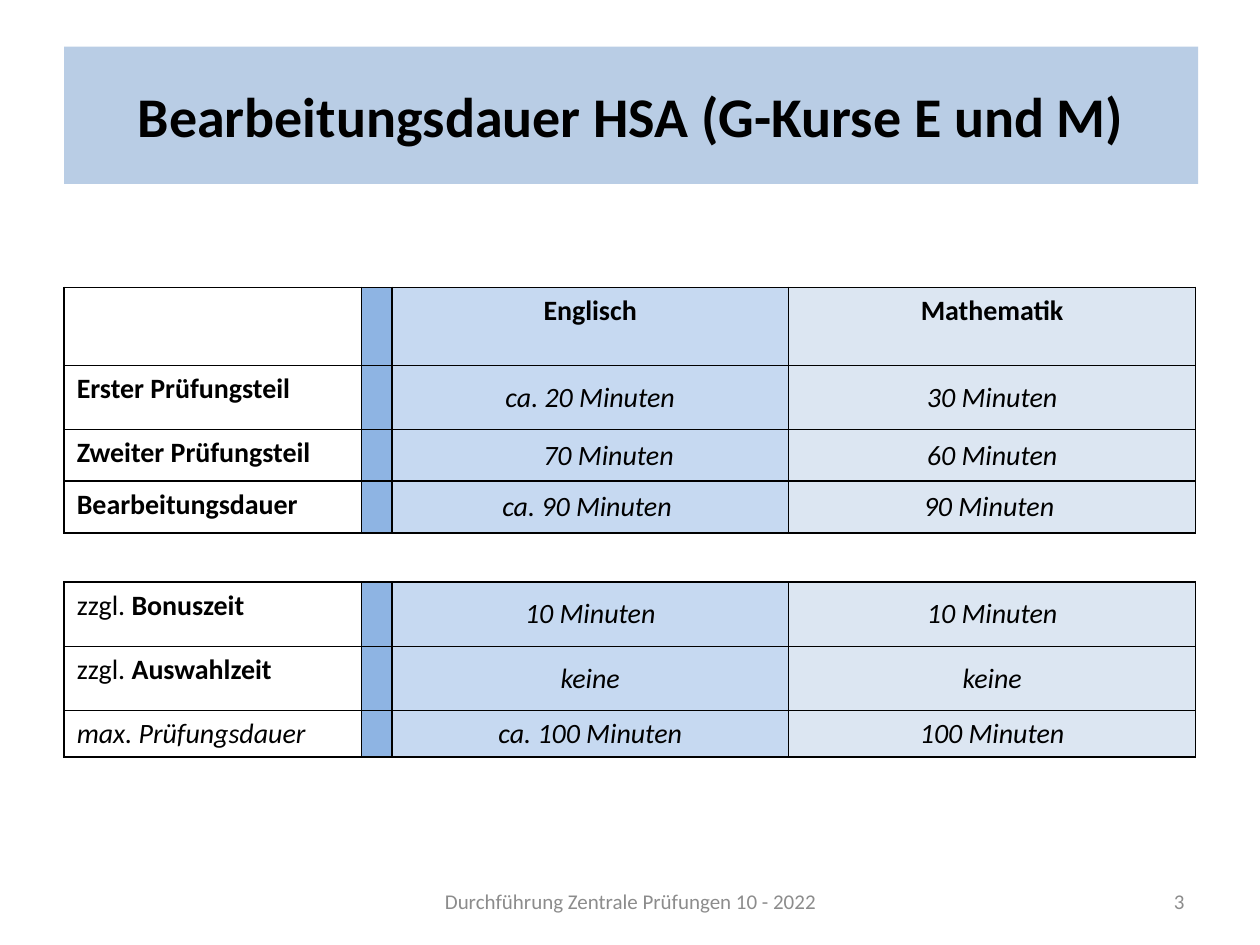
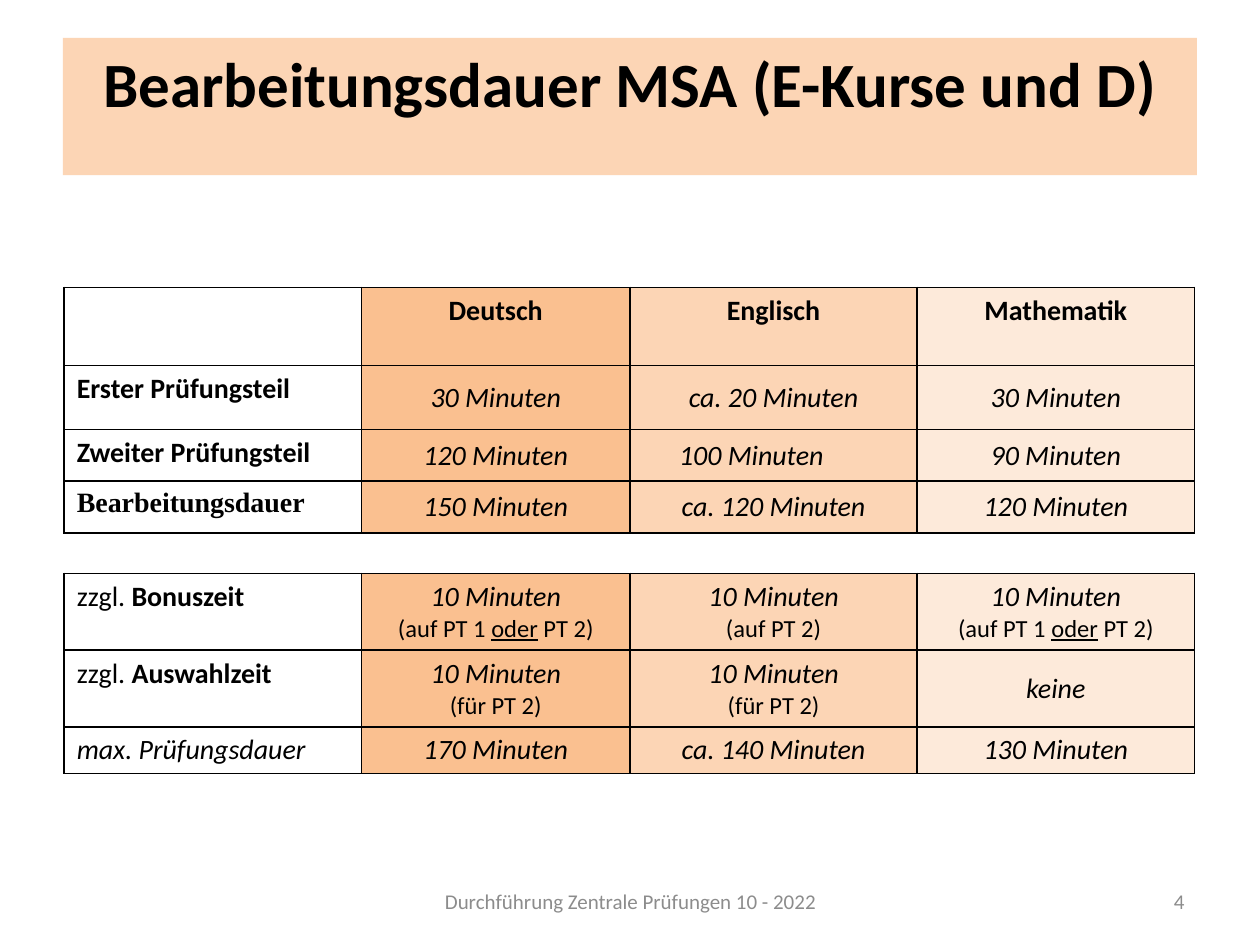
from dataclasses import dataclass
from typing import NamedTuple

from lxml.etree import SubElement
from pptx import Presentation
from pptx.dml.color import RGBColor
from pptx.enum.shapes import MSO_SHAPE as Shape
from pptx.enum.text import MSO_ANCHOR as Anchor, PP_ALIGN as Align
from pptx.oxml.ns import qn
from pptx.slide import Slide
from pptx.util import Inches, Pt

# Shared colours and fonts
BLACK = RGBColor(0x00, 0x00, 0x00)
GREY = RGBColor(0x8C, 0x8C, 0x8C)
HSA_BAND = RGBColor(0xB9, 0xCD, 0xE5)
HSA_TINTS = (RGBColor(0x8E, 0xB4, 0xE3), RGBColor(0xC6, 0xD9, 0xF1), RGBColor(0xDC, 0xE6, 0xF2))
MSA_BAND = RGBColor(0xFC, 0xD5, 0xB5)
MSA_TINTS = (RGBColor(0xFA, 0xC0, 0x90), MSA_BAND, RGBColor(0xFD, 0xEA, 0xDA))
SANS = "Calibri"
SERIF = "Times New Roman"

# Shared measures
TABLE_LEFT = 0.51
CELL_MARGIN = 0.1
VALUE_INDENT = 0.29
FOOTER = "Durchführung Zentrale Prüfungen 10 - 2022"


class Span(NamedTuple):
    text: str
    bold: bool = False
    underline: bool = False


class Line(NamedTuple):
    spans: tuple[Span, ...]
    size: int = 16
    bold: bool = False
    italic: bool = False
    font: str = SANS


@dataclass(frozen=True)
class Entry:
    lines: tuple[Line, ...] = (Line(()),)
    align: Align = Align.LEFT
    anchor: Anchor = Anchor.TOP
    indent: float = 0


@dataclass(frozen=True)
class TimeTable:
    top: float
    row_heights: tuple[float, ...]
    rows: tuple[tuple[Entry, ...], ...]


@dataclass(frozen=True)
class ExamPage:
    number: int
    title: str
    title_size: int
    title_left: float
    title_top: float
    title_anchor: Anchor
    band: RGBColor
    tints: tuple[RGBColor, ...]
    column_widths: tuple[float, ...]
    tables: tuple[TimeTable, ...]


# Kinds of table entries
def subject(name: str) -> Entry:
    return Entry((Line((Span(name),), bold=True),), Align.CENTER)


def part(name: str, font: str = SANS) -> Entry:
    return Entry((Line((Span(name),), bold=True, font=font),))


def extra(name: str) -> Entry:
    return Entry((Line((Span("zzgl. "), Span(name, bold=True))),))


def duration(text: str, *note: Span, align: Align = Align.CENTER, indent: float = 0) -> Entry:
    lines = [Line((Span(text),), italic=True)]
    if note:
        lines.append(Line(note, size=14))
    return Entry(tuple(lines), align, Anchor.MIDDLE, indent)


EMPTY = Entry()
MAXIMUM = Entry((Line((Span("max. Prüfungsdauer"),), italic=True),))
EITHER_PART = (Span("(auf PT 1 "), Span("oder", underline=True), Span(" PT 2)"))
ON_PART_2 = Span("(auf PT 2)")
FOR_PART_2 = Span("(für PT 2)")
PART_HEIGHTS = (0.62, 0.51, 0.41, 0.41)

PAGES = (
    ExamPage(
        3, "Bearbeitungsdauer HSA (G-Kurse E und M)", 32, 0.51, 0.37, Anchor.MIDDLE,
        HSA_BAND, HSA_TINTS, (2.36, 0.24, 3.15, 3.23),
        (
            TimeTable(2.28, PART_HEIGHTS, (
                (EMPTY, EMPTY, subject("Englisch"), subject("Mathematik")),
                (part("Erster Prüfungsteil"), EMPTY,
                 duration("ca. 20 Minuten"), duration("30 Minuten")),
                (part("Zweiter Prüfungsteil"), EMPTY,
                 duration("70 Minuten", indent=VALUE_INDENT), duration("60 Minuten")),
                (part("Bearbeitungsdauer"), EMPTY,
                 duration("ca. 90 Minuten "), duration("90 Minuten ")),
            )),
            TimeTable(4.62, (0.51, 0.51, 0.37), (
                (extra("Bonuszeit"), EMPTY, duration("10 Minuten"), duration("10 Minuten")),
                (extra("Auswahlzeit"), EMPTY, duration("keine"), duration("keine")),
                (MAXIMUM, EMPTY, duration("ca. 100 Minuten"), duration("100 Minuten")),
            )),
        ),
    ),
    ExamPage(
        4, "Bearbeitungsdauer MSA (E-Kurse und D)", 36, 0.5, 0.3, Anchor.TOP,
        MSA_BAND, MSA_TINTS, (2.36, 2.13, 2.28, 2.2),
        (
            TimeTable(2.28, PART_HEIGHTS, (
                (EMPTY, subject("Deutsch"), subject("Englisch"), subject("Mathematik")),
                (part("Erster Prüfungsteil"), duration("30 Minuten"),
                 duration("ca. 20 Minuten"), duration("30 Minuten")),
                (part("Zweiter Prüfungsteil"), duration("120 Minuten"),
                 duration("100 Minuten", align=Align.LEFT, indent=VALUE_INDENT),
                 duration("90 Minuten")),
                (part("Bearbeitungsdauer", SERIF), duration("150 Minuten"),
                 duration("ca. 120 Minuten"), duration("120 Minuten")),
            )),
            TimeTable(4.55, (0.61, 0.61, 0.37), (
                (extra("Bonuszeit"), duration("10 Minuten", *EITHER_PART),
                 duration("10 Minuten", ON_PART_2), duration("10 Minuten", *EITHER_PART)),
                (extra("Auswahlzeit"), duration("10 Minuten", FOR_PART_2),
                 duration("10 Minuten", FOR_PART_2), duration("keine")),
                (MAXIMUM, duration("170 Minuten"),
                 duration("ca. 140 Minuten"), duration("130 Minuten")),
            )),
        ),
    ),
)


def style_font(font, size: int, colour: RGBColor, bold: bool = False,
               italic: bool = False, name: str = SANS) -> None:
    font.name, font.size, font.bold, font.italic = name, Pt(size), bold, italic
    font.color.rgb = colour


def draw_title(slide: Slide, page: ExamPage) -> None:
    band = slide.shapes.add_shape(Shape.RECTANGLE, Inches(page.title_left),
                                  Inches(page.title_top), Inches(9), Inches(1.09))
    band.shadow.inherit = False
    band.fill.solid()
    band.fill.fore_color.rgb = page.band
    band.line.fill.background()
    frame = band.text_frame
    frame.word_wrap = True
    frame.vertical_anchor = page.title_anchor
    heading = frame.paragraphs[0]
    heading.text = page.title
    heading.alignment = Align.CENTER
    style_font(heading.font, page.title_size, BLACK, bold=True)


def draw_footer(slide: Slide, text: str, left: float, width: float, align: Align) -> None:
    footer = slide.shapes.add_textbox(Inches(left), Inches(6.95), Inches(width), Inches(0.4))
    frame = footer.text_frame
    frame.word_wrap = True
    frame.vertical_anchor = Anchor.MIDDLE
    note = frame.paragraphs[0]
    note.text = text
    note.alignment = align
    style_font(note.font, 12, GREY)


def add_borders(cell) -> None:
    properties = cell._tc.get_or_add_tcPr()
    for side in ("a:lnL", "a:lnR", "a:lnT", "a:lnB"):
        border = SubElement(properties, qn(side), w=str(Pt(1)))
        fill = SubElement(border, qn("a:solidFill"))
        SubElement(fill, qn("a:srgbClr"), val=str(BLACK))


def fill_cell(cell, entry: Entry, tint: RGBColor | None) -> None:
    add_borders(cell)
    if tint is None:
        cell.fill.background()
    else:
        cell.fill.solid()
        cell.fill.fore_color.rgb = tint
    cell.vertical_anchor = entry.anchor
    cell.margin_left = Inches(CELL_MARGIN + entry.indent)
    frame = cell.text_frame
    for index, line in enumerate(entry.lines):
        paragraph = frame.add_paragraph() if index else frame.paragraphs[0]
        paragraph.alignment = entry.align
        style_font(paragraph.font, line.size, BLACK, line.bold, line.italic, line.font)
        for span in line.spans:
            run = paragraph.add_run()
            run.text = span.text
            if span.bold:
                run.font.bold = True
            if span.underline:
                run.font.underline = True


def draw_table(slide: Slide, page: ExamPage, times: TimeTable) -> None:
    table = slide.shapes.add_table(
        len(times.rows), len(page.column_widths), Inches(TABLE_LEFT), Inches(times.top),
        Inches(sum(page.column_widths)), Inches(sum(times.row_heights))).table
    table.first_row = table.horz_banding = False
    for column, width in zip(table.columns, page.column_widths):
        column.width = Inches(width)
    for row, height, entries in zip(table.rows, times.row_heights, times.rows):
        row.height = Inches(height)
        for cell, entry, tint in zip(row.cells, entries, (None, *page.tints)):
            fill_cell(cell, entry, tint)


def main() -> None:
    deck = Presentation()
    deck.slide_width, deck.slide_height = Inches(10), Inches(7.5)
    blank = deck.slide_layouts[6]
    for page in PAGES:
        slide = deck.slides.add_slide(blank)
        draw_title(slide, page)
        draw_footer(slide, FOOTER, 3.42, 3.17, Align.CENTER)
        draw_footer(slide, str(page.number), 7.17, 2.33, Align.RIGHT)
        for times in page.tables:
            draw_table(slide, page, times)
    deck.save("out.pptx")


if __name__ == "__main__":
    main()
